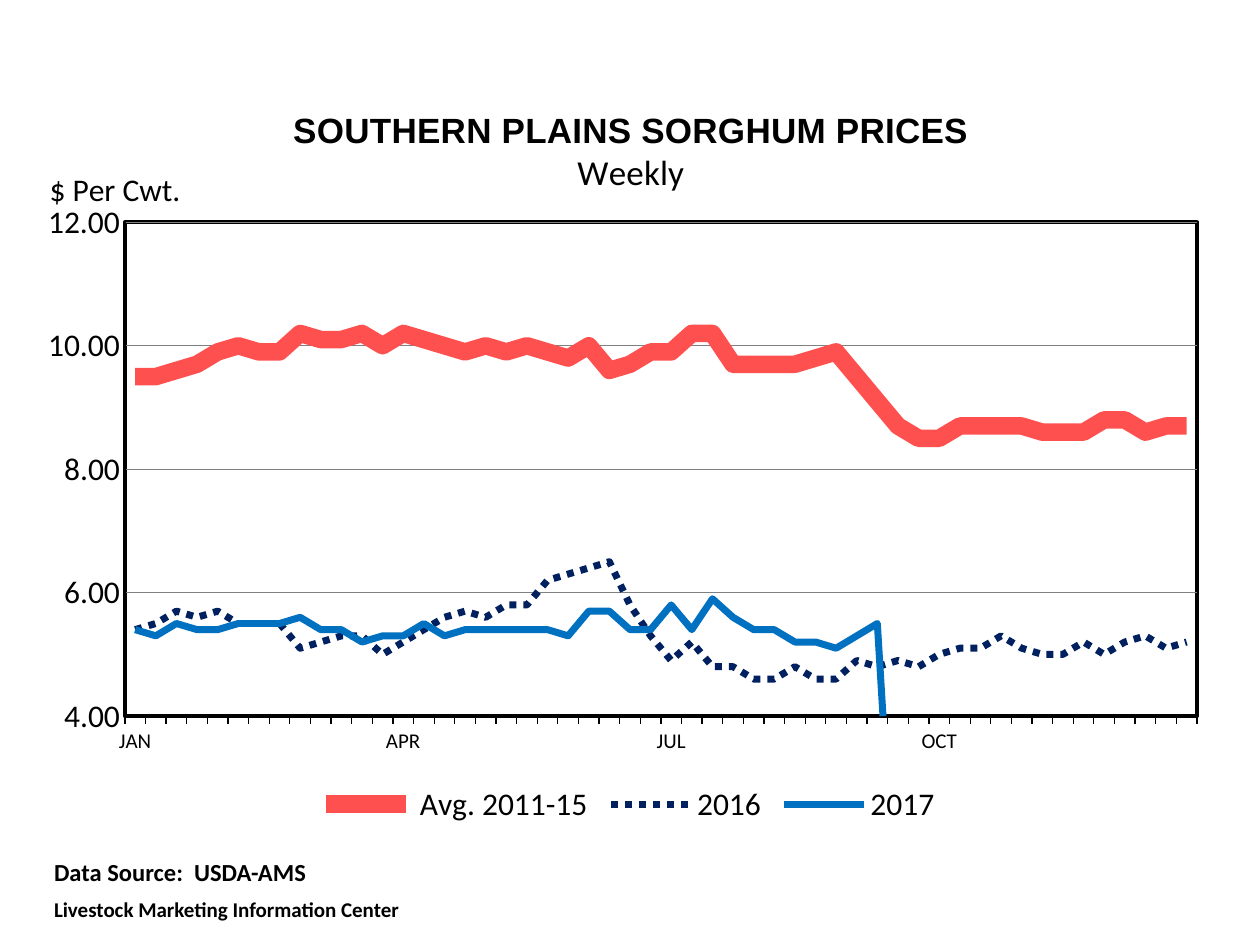
import lxml.etree
import pptx
import pptx.chart.data
import pptx.dml.color
import pptx.enum.chart
import pptx.enum.dml
import pptx.oxml.ns
import pptx.util

Cm = pptx.util.Cm
Pt = pptx.util.Pt
qn = pptx.oxml.ns.qn
rgb = pptx.dml.color.RGBColor.from_string


def add_text(paragraph, text, size, font="Calibri", bold=False, color="000000"):
    run = paragraph.add_run()
    run.text = text
    run.font.size = Pt(size)
    run.font.name = font
    run.font.bold = bold
    run.font.color.rgb = rgb(color)


def set_layout(parent, index, target=None, **percents):
    """Give a chart part a manual layout, in percent of the chart's size."""
    for old_layout in parent.findall(qn("c:layout")):
        parent.remove(old_layout)
    layout = lxml.etree.Element(qn("c:layout"))
    manual = lxml.etree.SubElement(layout, qn("c:manualLayout"))
    if target:
        lxml.etree.SubElement(manual, qn("c:layoutTarget"), val=target)
    for mode in ("c:xMode", "c:yMode"):
        lxml.etree.SubElement(manual, qn(mode), val="edge")
    for side, percent in percents.items():
        lxml.etree.SubElement(manual, qn("c:" + side), val=str(percent / 100))
    parent.insert(index, layout)


presentation = pptx.Presentation()
presentation.slide_width = Cm(25.4)
presentation.slide_height = Cm(19.05)
slide = presentation.slides.add_slide(presentation.slide_layouts[6])

# Weekly prices
weeks = 52
quarter_starts = {0: "JAN", 13: "APR", 26: "JUL", 39: "OCT"}
average_prices = [
    9.5, 9.5, 9.6, 9.7, 9.9, 10, 9.9, 9.9, 10.2, 10.1, 10.1, 10.2, 10,
    10.2, 10.1, 10, 9.9, 10, 9.9, 10, 9.9, 9.8, 10, 9.6, 9.7, 9.9,
    9.9, 10.2, 10.2, 9.7, 9.7, 9.7, 9.7, 9.8, 9.9, 9.5, 9.1, 8.7, 8.5,
    8.5, 8.7, 8.7, 8.7, 8.7, 8.6, 8.6, 8.6, 8.8, 8.8, 8.6, 8.7, 8.7]
prices_2016 = [
    5.4, 5.5, 5.7, 5.6, 5.7, 5.5, 5.5, 5.5, 5.1, 5.2, 5.3, 5.3, 5,
    5.2, 5.4, 5.6, 5.7, 5.6, 5.8, 5.8, 6.2, 6.3, 6.4, 6.5, 5.8, 5.3,
    4.9, 5.2, 4.8, 4.8, 4.6, 4.6, 4.8, 4.6, 4.6, 4.9, 4.8, 4.9, 4.8,
    5, 5.1, 5.1, 5.3, 5.1, 5, 5, 5.2, 5, 5.2, 5.3, 5.1, 5.2]
prices_2017 = [
    5.4, 5.3, 5.5, 5.4, 5.4, 5.5, 5.5, 5.5, 5.6, 5.4, 5.4, 5.2, 5.3,
    5.3, 5.5, 5.3, 5.4, 5.4, 5.4, 5.4, 5.4, 5.3, 5.7, 5.7, 5.4, 5.4,
    5.8, 5.4, 5.9, 5.6, 5.4, 5.4, 5.2, 5.2, 5.1, 5.3, 5.5]
prices_2017 += [None] * (weeks - len(prices_2017))

solid = pptx.enum.dml.MSO_LINE.SOLID
dotted = pptx.enum.dml.MSO_LINE.ROUND_DOT
price_lines = [
    (" Avg. 2011-15", average_prices, "FF5050", 10, solid),
    ("2016", prices_2016, "002060", 4, dotted),
    ("2017", prices_2017, "0070C0", 4, solid),
]

price_data = pptx.chart.data.CategoryChartData(number_format="0.00")
price_data.categories = [quarter_starts.get(week, "") for week in range(weeks)]
for name, prices, *_ in price_lines:
    price_data.add_series(name, prices)

chart = slide.shapes.add_chart(
    pptx.enum.chart.XL_CHART_TYPE.LINE,
    Cm(0.43), Cm(1.7), Cm(24.56), Cm(15.04), price_data).chart
chart.font.size = Pt(18)
chart.font.name = "Calibri"
chart.font.color.rgb = rgb("000000")
chart.plots[0].vary_by_categories = False

for series, (_, _, color, width, dash) in zip(chart.plots[0].series, price_lines):
    series.smooth = False
    series.format.line.color.rgb = rgb(color)
    series.format.line.width = Pt(width)
    series.format.line.dash_style = dash

# The unfinished year falls to zero after its last week
chart_xml = chart._chartSpace.find(qn("c:chart"))
chart_xml.find(qn("c:dispBlanksAs")).set("val", "zero")

# Title
heading = chart.chart_title.text_frame
add_text(heading.paragraphs[0], "SOUTHERN PLAINS SORGHUM PRICES",
         size=20, font="Arial", bold=True)
add_text(heading.add_paragraph(), "Weekly", size=20)
set_layout(chart_xml.find(qn("c:title")), 1, x=22, y=2.8)

# Axes
tick_mark = pptx.enum.chart.XL_TICK_MARK
week_axis = chart.category_axis
price_axis = chart.value_axis
for axis in (week_axis, price_axis):
    axis.format.line.color.rgb = rgb("000000")
    axis.format.line.width = Pt(0.75)
    axis.minor_tick_mark = tick_mark.NONE

week_axis.major_tick_mark = tick_mark.OUTSIDE
week_axis.tick_labels.font.size = Pt(12)

price_axis.major_tick_mark = tick_mark.NONE
price_axis.minimum_scale = 4
price_axis.maximum_scale = 12
price_axis.major_unit = 2
price_axis.tick_labels.number_format = "#,##0.00"
price_axis.tick_labels.number_format_is_linked = False
price_axis.has_major_gridlines = True
price_axis.major_gridlines.format.line.color.rgb = rgb("808080")
price_axis.major_gridlines.format.line.width = Pt(0.75)

unit_label = price_axis.axis_title.text_frame
add_text(unit_label.paragraphs[0], "$ Per Cwt.", size=18)
unit_label._txBody.bodyPr.set("rot", "0")
unit_label._txBody.bodyPr.set("vert", "horz")
set_layout(price_axis.axis_title._element, 1, x=1.85, y=10.4)

# Legend
chart.has_legend = True
chart.legend.position = pptx.enum.chart.XL_LEGEND_POSITION.BOTTOM
chart.legend.include_in_layout = False
chart.legend.font.size = Pt(18)
set_layout(chart.legend._element, 1, x=24, y=93, w=52, h=7)

# Plot area with a black frame
plot_area = chart_xml.find(qn("c:plotArea"))
set_layout(plot_area, 0, target="inner", x=8.5, y=18.5, w=88, h=66.2)
frame = lxml.etree.SubElement(plot_area, qn("c:spPr"))
outline = lxml.etree.Element(qn("a:ln"), w=str(Pt(2.25)))
for parent, color in ((frame, "FFFFFF"), (outline, "000000")):
    fill = lxml.etree.SubElement(parent, qn("a:solidFill"))
    lxml.etree.SubElement(fill, qn("a:srgbClr"), val=color)
frame.append(outline)

# Source
source = slide.shapes.add_textbox(Cm(0.84), Cm(17.15), Cm(11.43), Cm(1.63)).text_frame
source.word_wrap = True
add_text(source.paragraphs[0], "Data Source:  USDA-AMS", size=14, bold=True)
publisher = source.add_paragraph()
publisher.space_before = Pt(6)
add_text(publisher, "Livestock Marketing Information Center", size=12, bold=True)

presentation.save("out.pptx")
